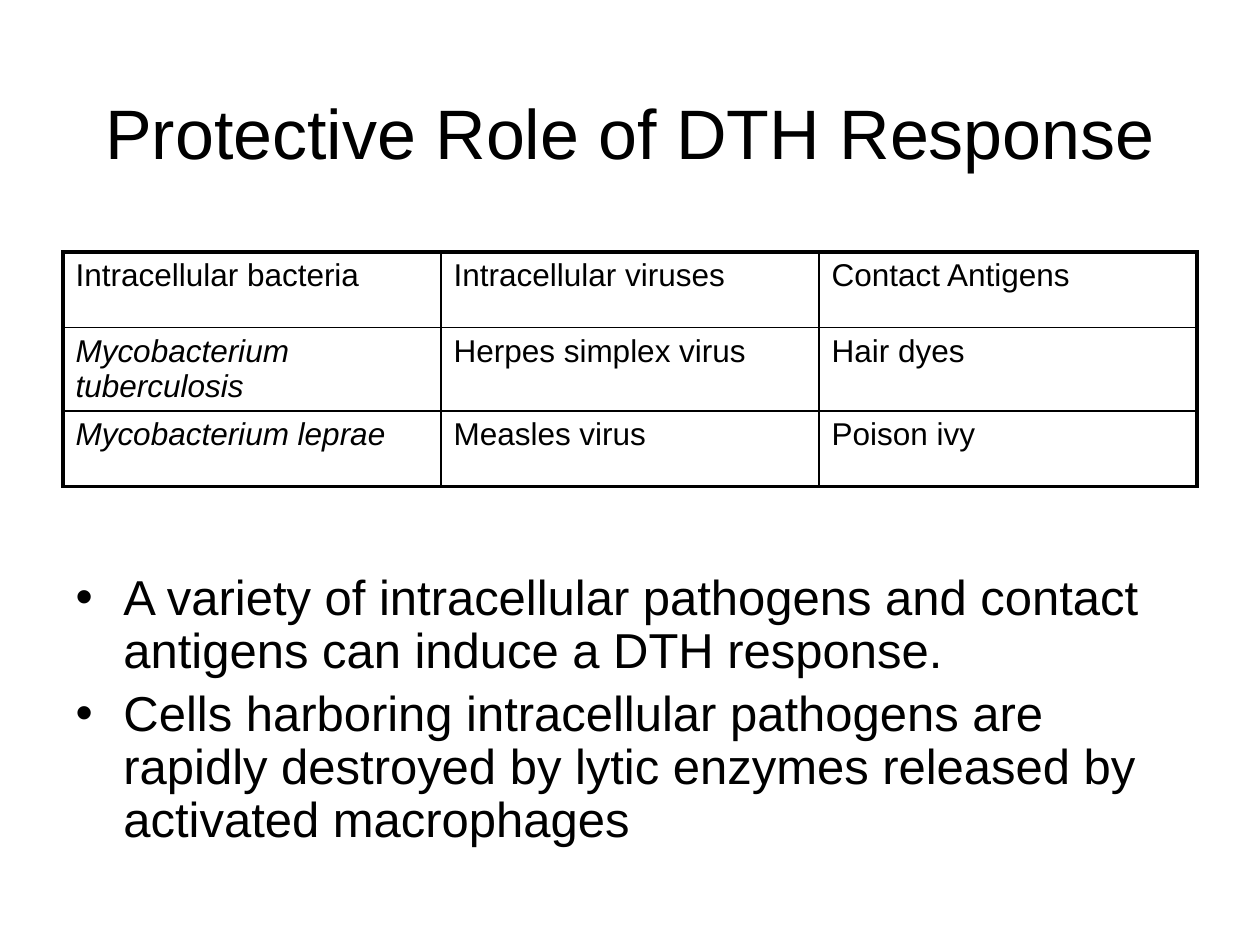
from lxml import etree
from pptx import Presentation
from pptx.dml.color import RGBColor
from pptx.enum.text import MSO_ANCHOR, MSO_AUTO_SIZE, PP_ALIGN
from pptx.oxml.ns import qn
from pptx.util import Inches, Pt

CENTER, LEFT = PP_ALIGN.CENTER, PP_ALIGN.LEFT
MIDDLE, TOP = MSO_ANCHOR.MIDDLE, MSO_ANCHOR.TOP
NO_AUTOFIT = MSO_AUTO_SIZE.NONE

BLACK = RGBColor(0x00, 0x00, 0x00)
FONT = "Arial"
OUTER_RULE, INNER_RULE = Pt(2.25), Pt(1)

TITLE = "Protective Role of DTH Response"
ANTIGENS = [
    ["Intracellular bacteria", "Intracellular viruses", "Contact Antigens"],
    ["Mycobacterium tuberculosis", "Herpes simplex virus", "Hair dyes"],
    ["Mycobacterium leprae", "Measles virus", "Poison ivy"],
]
POINTS = [
    "A variety of intracellular pathogens and contact antigens can induce a DTH response.",
    "Cells harboring intracellular pathogens are rapidly destroyed by lytic enzymes "
    "released by activated macrophages",
]


def style_runs(paragraph, size, italic=False):
    for run in paragraph.runs:
        run.font.name = FONT
        run.font.size = Pt(size)
        run.font.italic = italic
        run.font.color.rgb = BLACK


def place(region, box):
    region.left, region.top, region.width, region.height = map(Inches, box)


def fill_title(title, box):
    place(title, box)
    frame = title.text_frame
    frame.text = TITLE
    frame.auto_size = NO_AUTOFIT
    frame.vertical_anchor = MIDDLE
    heading = frame.paragraphs[0]
    heading.alignment = CENTER
    style_runs(heading, 40)


def set_borders(cell, widths):
    properties = cell._tc.get_or_add_tcPr()
    for position, (side, width) in enumerate(widths.items()):
        line = etree.Element(qn(f"a:ln{side}"), w=str(width))
        fill = etree.SubElement(line, qn("a:solidFill"))
        etree.SubElement(fill, qn("a:srgbClr"), val=str(BLACK))
        properties.insert(position, line)


def add_antigen_table(slide, box):
    row_count, column_count = len(ANTIGENS), len(ANTIGENS[0])
    table = slide.shapes.add_table(row_count, column_count, *map(Inches, box)).table
    table.first_row = table.horz_banding = False
    for r, entries in enumerate(ANTIGENS):
        for c, entry in enumerate(entries):
            cell = table.cell(r, c)
            cell.text = entry
            cell.fill.background()
            style_runs(cell.text_frame.paragraphs[0], 18, italic=r > 0 and c == 0)
            on_edge = {
                "L": c == 0,
                "R": c == column_count - 1,
                "T": r == 0,
                "B": r == row_count - 1,
            }
            set_borders(cell, {side: OUTER_RULE if edge else INNER_RULE
                               for side, edge in on_edge.items()})


def set_bullet(paragraph, indent):
    properties = paragraph._p.get_or_add_pPr()
    properties.set("marL", str(indent))
    properties.set("indent", str(-indent))
    etree.SubElement(properties, qn("a:buFont"), typeface=FONT)
    etree.SubElement(properties, qn("a:buChar"), char="•")


def fill_points(body, box):
    place(body, box)
    frame = body.text_frame
    frame.text = "\n".join(POINTS)
    frame.auto_size = NO_AUTOFIT
    frame.vertical_anchor = TOP
    for point in frame.paragraphs:
        point.alignment = LEFT
        point.line_spacing = 0.9
        point.space_before = Pt(5.6)
        set_bullet(point, Inches(0.38))
        style_runs(point, 28)


def main():
    presentation = Presentation()
    presentation.slide_width, presentation.slide_height = Inches(10), Inches(7.5)
    slide = presentation.slides.add_slide(presentation.slide_layouts[1])
    fill_title(slide.shapes.title, (0.5, 0.42, 9, 1.25))
    fill_points(slide.placeholders[1], (0.5, 4.5, 9, 2.39))
    add_antigen_table(slide, (0.5, 2, 9, 1.8))
    presentation.save("out.pptx")


if __name__ == "__main__":
    main()
